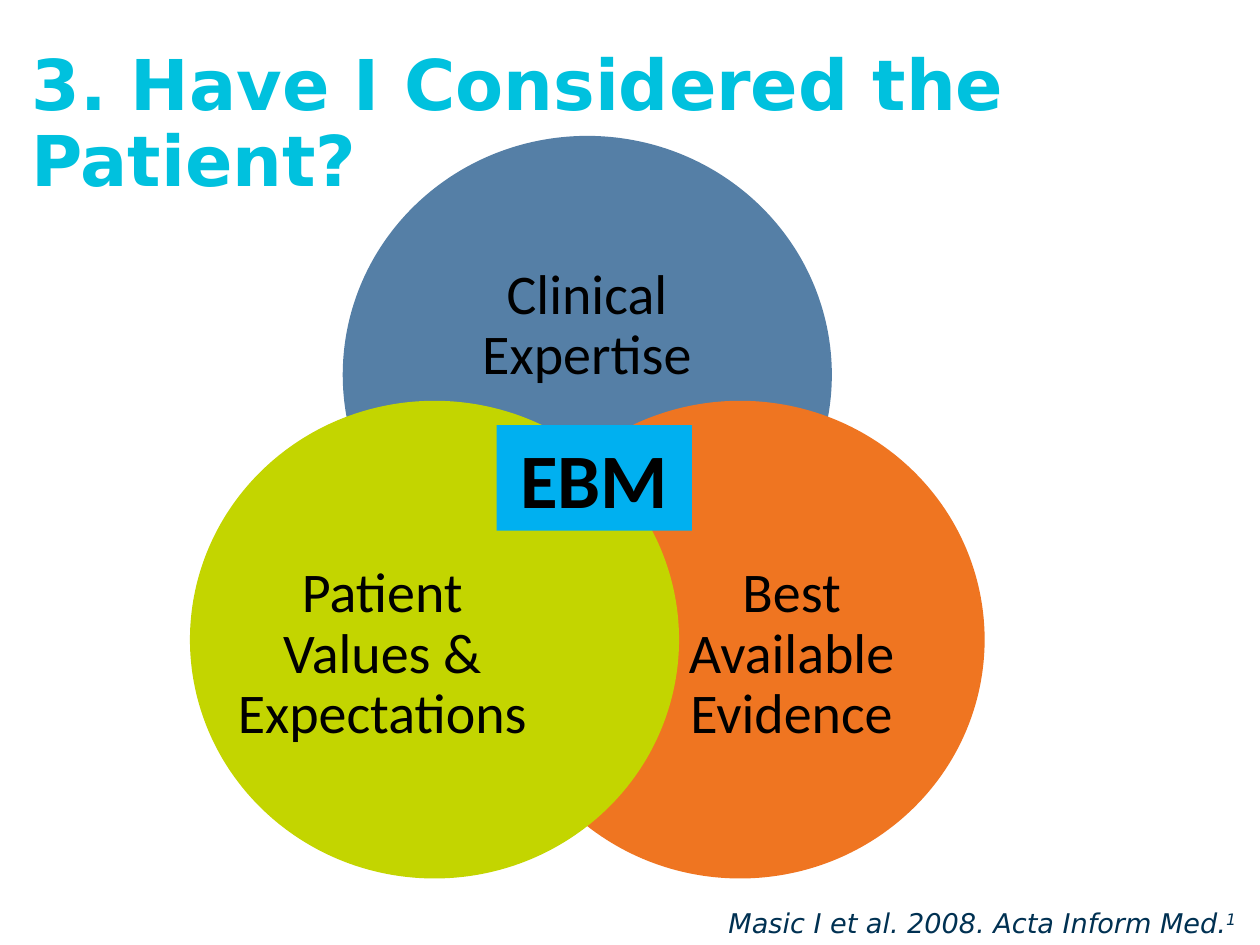
from dataclasses import dataclass
from pptx import Presentation
from pptx.dml.color import RGBColor as Rgb
from pptx.enum.shapes import MSO_SHAPE as Kind
from pptx.enum.text import MSO_ANCHOR as Anchor, MSO_AUTO_SIZE as Fit, PP_ALIGN as Align
from pptx.util import Cm, Pt


@dataclass(frozen=True)
class Theme:
    head: str = "00C1DE"
    ink: str = "000000"
    note: str = "003152"
    core: str = "00B0F0"
    blue: str = "557FA6"
    orange: str = "EF7521"
    lime: str = "C3D500"
    sans: str = "DejaVu Sans"
    label: str = "Calibri"
    big: float = 44
    title: float = 40
    mid: float = 32
    small: float = 15.5


THEME = Theme()
WIDE, HIGH = 9.86, 9.63
LEFT, TOP = 6.91, 2.74
SIDE, DROP = 3.08, 5.34


def lengths(*nums):
    return [Cm(num) for num in nums]


def apply(item, values):
    for name, value in values.items():
        setattr(item, name, value)


def style(para, face, size, color, **extra):
    for run in para.runs:
        apply(run.font, {"name": face, "size": Pt(size), **extra})
        run.font.color.rgb = Rgb.from_string(color)


def write(shape, text, align, spacing=1.0, **frame):
    body = shape.text_frame
    apply(body, {"word_wrap": True, "auto_size": Fit.NONE,
                 "vertical_anchor": Anchor.TOP, **frame})
    para = body.paragraphs[0]
    apply(para, {"text": text, "alignment": align, "line_spacing": spacing})
    return para


def block(shapes, kind, box, color):
    shape = shapes.add_shape(kind, *lengths(*box))
    shape.shadow.inherit = False
    shape.fill.solid()
    shape.fill.fore_color.rgb = Rgb.from_string(color)
    shape.line.fill.background()
    return shape


def label(shapes, text, box):
    area = shapes.add_textbox(*lengths(*box))
    zero = dict.fromkeys(["margin_left", "margin_top", "margin_right", "margin_bottom"], 0)
    para = write(area, text, Align.CENTER, 0.9, vertical_anchor=Anchor.MIDDLE, **zero)
    style(para, THEME.label, THEME.mid, THEME.ink)


def venn(slide):
    group = slide.shapes.add_group_shape().shapes
    low = (10.57, 5.92, 5.28)
    rings = [
        (0, 0, THEME.blue, "Clinical Expertise", (8.23, 4.42, 7.21, 4.32)),
        (SIDE, DROP, THEME.orange, "Best\vAvailable\vEvidence", (13, *low)),
        (-SIDE, DROP, THEME.lime, "Patient Values & Expectations", (4.75, *low)),
    ]
    for across, down, color, text, box in rings:
        block(group, Kind.OVAL, (LEFT + across, TOP + down, WIDE, HIGH), color)
        label(group, text, box)


def core(slide):
    shape = block(slide.shapes, Kind.RECTANGLE, (10.01, 8.57, 3.94, 2.13), THEME.core)
    para = write(shape, "EBM", Align.CENTER)
    style(para, THEME.label, THEME.big, THEME.ink, bold=True)


def cite(slide):
    area = slide.shapes.add_textbox(*lengths(5.56, 18.14, 19.61, 0.91))
    para = write(area, "Masic I et al. 2008. Acta Inform Med.", Align.RIGHT)
    mark = para.add_run()
    mark.text = "1"
    style(para, THEME.sans, THEME.small, THEME.note, italic=True)
    mark.font._element.set("baseline", "30000")


def head(slide):
    title = slide.shapes.title
    places = lengths(0.38, 0.88, 25.73, 2.08)
    apply(title, dict(zip(("left", "top", "width", "height"), places)))
    para = write(title, "3. Have I Considered the Patient?", Align.LEFT, 0.9)
    style(para, THEME.sans, THEME.title, THEME.head, bold=True)


def main():
    deck = Presentation()
    apply(deck, {"slide_width": Cm(25.4), "slide_height": Cm(19.05)})
    slide = deck.slides.add_slide(deck.slide_layouts[5])
    for draw in (head, venn, core, cite):
        draw(slide)
    deck.save("out.pptx")


if __name__ == "__main__":
    main()
